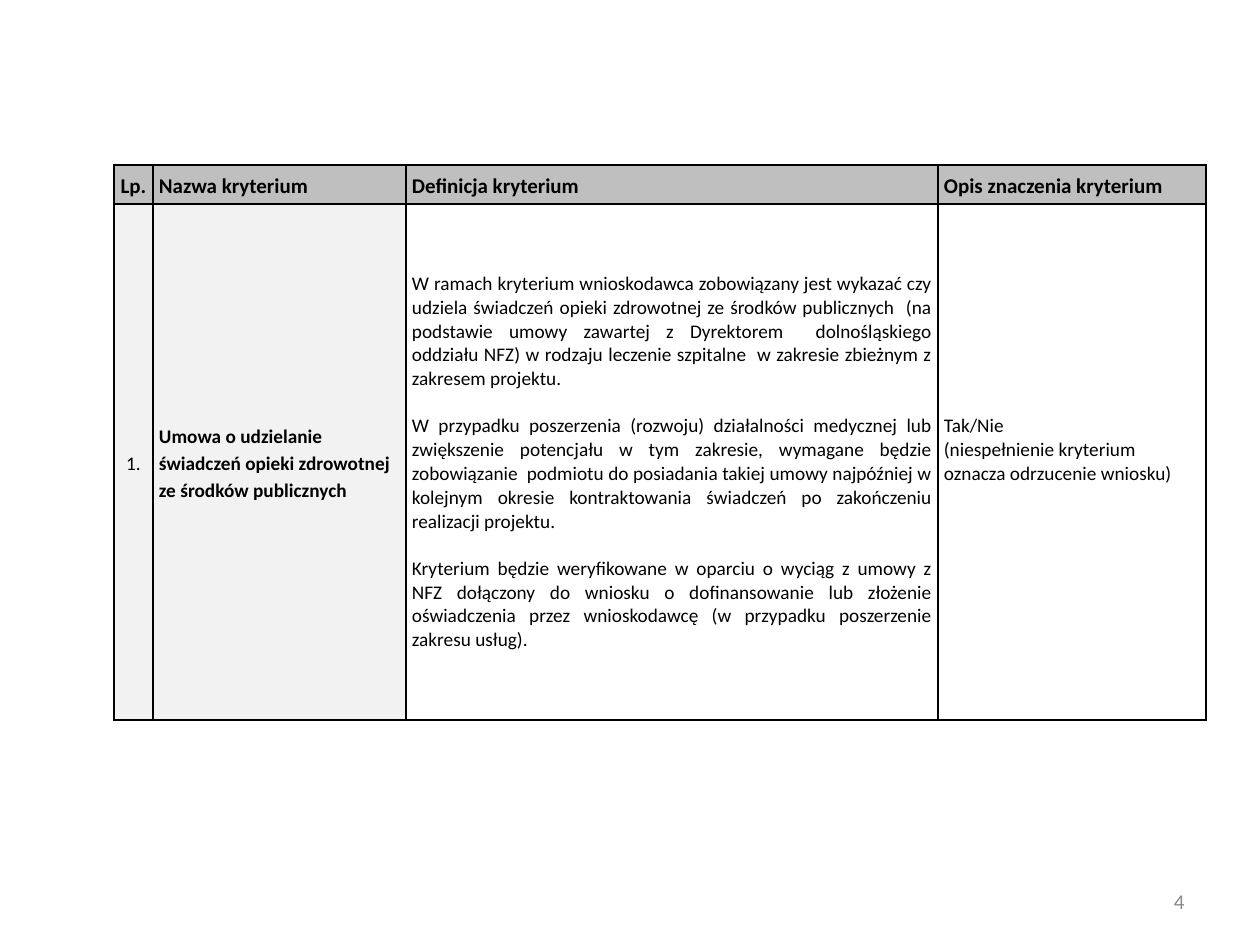
from dataclasses import dataclass
from typing import Optional

from lxml.etree import SubElement
from pptx import Presentation
from pptx.dml.color import RGBColor
from pptx.enum.text import MSO_ANCHOR, PP_ALIGN
from pptx.oxml.ns import qn
from pptx.util import Emu, Pt

EMU_PER_PX = 914400 / 126
COLUMN_WIDTHS = (39, 253, 532, 268)
ROW_HEIGHTS = (39, 516)
HEADER_FILL = "BFBFBF"
LABEL_FILL = "F2F2F2"


@dataclass
class Cell:
    paragraphs: tuple[str, ...]
    fill: Optional[str] = None
    size: int = 11
    bold: bool = False
    align: PP_ALIGN = PP_ALIGN.LEFT
    line_spacing: float = 1.0
    space_after: float = 0
    gap: float = 0
    bottom_margin: int = 0


def px(length: int) -> Emu:
    return Emu(round(length * EMU_PER_PX))


def color(value: str) -> RGBColor:
    return RGBColor.from_string(value)


def write_text(frame, paragraphs, *, size, bold=False, text_color="000000",
               align=PP_ALIGN.LEFT, line_spacing=1.0, space_after=0, gap=0) -> None:
    """Fill a text frame; gap is the space in points between paragraphs."""
    frame.word_wrap = True
    for index, text in enumerate(paragraphs):
        paragraph = frame.add_paragraph() if index else frame.paragraphs[0]
        paragraph.text = text
        paragraph.alignment = align
        paragraph.line_spacing = line_spacing
        paragraph.space_before = Pt(gap if index else 0)
        paragraph.space_after = Pt(space_after)
        for run in paragraph.runs:
            run.font.name = "Calibri"
            run.font.size = Pt(size)
            run.font.bold = bold
            run.font.color.rgb = color(text_color)


def add_borders(table_cell) -> None:
    properties = table_cell._tc.get_or_add_tcPr()
    for position, side in enumerate(("lnL", "lnR", "lnT", "lnB")):
        line = SubElement(properties, qn(f"a:{side}"), w=str(Pt(1)))
        fill = SubElement(line, qn("a:solidFill"))
        SubElement(fill, qn("a:srgbClr"), val="000000")
        properties.remove(line)
        properties.insert(position, line)


def draw_cell(table_cell, cell: Cell) -> None:
    table_cell.margin_left = table_cell.margin_right = px(6)
    table_cell.margin_top = 0
    table_cell.margin_bottom = px(cell.bottom_margin)
    table_cell.vertical_anchor = MSO_ANCHOR.MIDDLE
    if cell.fill:
        table_cell.fill.solid()
        table_cell.fill.fore_color.rgb = color(cell.fill)
    else:
        table_cell.fill.background()
    add_borders(table_cell)
    write_text(table_cell.text_frame, cell.paragraphs, size=cell.size,
               bold=cell.bold, align=cell.align, line_spacing=cell.line_spacing,
               space_after=cell.space_after, gap=cell.gap)


def heading(text: str, align: PP_ALIGN = PP_ALIGN.LEFT) -> Cell:
    return Cell((text,), HEADER_FILL, size=12, bold=True, align=align,
                line_spacing=1.15, space_after=10)


def label(text: str, bold: bool, align: PP_ALIGN = PP_ALIGN.LEFT) -> Cell:
    return Cell((text,), LABEL_FILL, bold=bold, align=align,
                line_spacing=1.15, space_after=10)


DEFINITION = (
    "W ramach kryterium wnioskodawca zobowiązany jest wykazać czy udziela "
    "świadczeń opieki zdrowotnej ze środków publicznych  (na podstawie umowy "
    "zawartej z Dyrektorem  dolnośląskiego oddziału NFZ) w rodzaju leczenie "
    "szpitalne  w zakresie zbieżnym z zakresem projektu.",
    "W przypadku poszerzenia (rozwoju) działalności medycznej lub zwiększenie "
    "potencjału w tym zakresie, wymagane będzie zobowiązanie  podmiotu do "
    "posiadania takiej umowy najpóźniej w kolejnym okresie kontraktowania "
    "świadczeń po zakończeniu realizacji projektu.",
    "Kryterium będzie weryfikowane w oparciu o wyciąg z umowy z NFZ dołączony "
    "do wniosku o dofinansowanie lub złożenie oświadczenia przez wnioskodawcę "
    "(w przypadku poszerzenie zakresu usług).",
)

CRITERIA = (
    (
        heading("Lp.", PP_ALIGN.CENTER),
        heading("Nazwa kryterium"),
        heading("Definicja kryterium"),
        heading("Opis znaczenia kryterium"),
    ),
    (
        label("1.", False, PP_ALIGN.CENTER),
        label("Umowa o udzielanie świadczeń opieki zdrowotnej ze środków "
              "publicznych", True),
        Cell(DEFINITION, align=PP_ALIGN.JUSTIFY, gap=13.5),
        Cell(("Tak/Nie", "(niespełnienie kryterium \voznacza odrzucenie wniosku)"),
             bottom_margin=24),
    ),
)


def add_criteria_table(slide) -> None:
    table = slide.shapes.add_table(
        len(ROW_HEIGHTS), len(COLUMN_WIDTHS), px(114), px(165),
        px(sum(COLUMN_WIDTHS)), px(sum(ROW_HEIGHTS))).table
    table.first_row = table.horz_banding = False
    for column, width in zip(table.columns, COLUMN_WIDTHS):
        column.width = px(width)
    for row, height, cells in zip(table.rows, ROW_HEIGHTS, CRITERIA):
        row.height = px(height)
        for table_cell, cell in zip(row.cells, cells):
            draw_cell(table_cell, cell)


def add_page_number(slide) -> None:
    frame = slide.shapes.add_textbox(px(903), px(876), px(294), px(50)).text_frame
    frame.vertical_anchor = MSO_ANCHOR.MIDDLE
    write_text(frame, ("4",), size=12, text_color="898989", align=PP_ALIGN.RIGHT)


def main() -> None:
    presentation = Presentation()
    presentation.slide_width, presentation.slide_height = px(1260), px(945)
    slide = presentation.slides.add_slide(presentation.slide_layouts[6])
    add_page_number(slide)
    add_criteria_table(slide)
    presentation.save("out.pptx")


if __name__ == "__main__":
    main()
